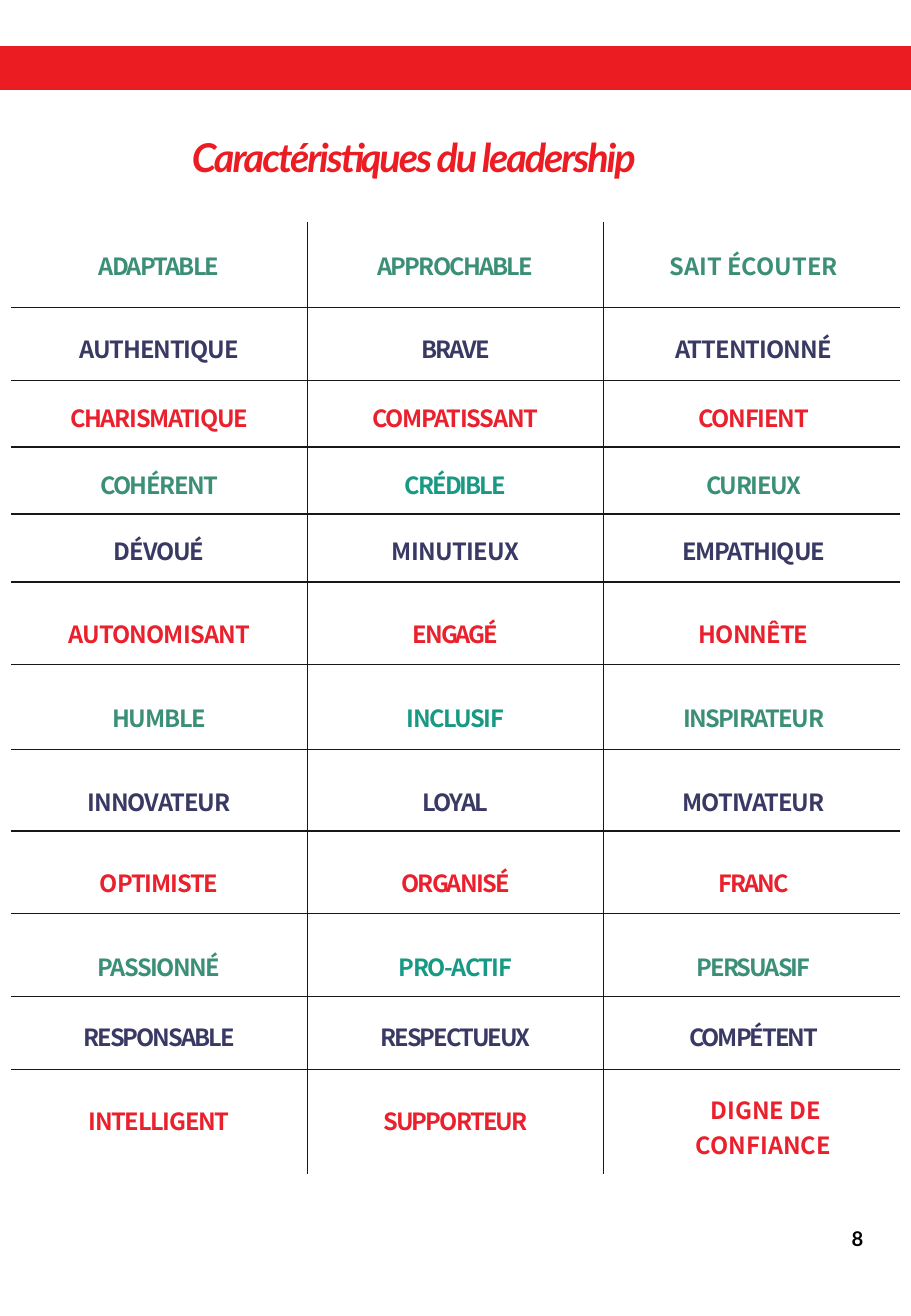
from dataclasses import dataclass

from lxml.etree import SubElement
from pptx import Presentation
from pptx.dml.color import RGBColor
from pptx.enum.shapes import MSO_SHAPE
from pptx.enum.text import MSO_ANCHOR, MSO_AUTO_SIZE, PP_ALIGN
from pptx.oxml.ns import qn
from pptx.util import Inches, Pt

BAR_RED = RGBColor(0xEC, 0x1C, 0x23)
RED = RGBColor(0xEA, 0x20, 0x2C)
GREEN = RGBColor(0x3C, 0x8F, 0x77)
TEAL = RGBColor(0x17, 0x99, 0x84)
NAVY = RGBColor(0x39, 0x39, 0x64)
BLACK = RGBColor(0, 0, 0)
RULE = RGBColor(0x17, 0x17, 0x17)

TITLE_FONT = "Lato"
TABLE_FONT = "Noto Sans CJK JP"
NO_GRID_STYLE = "{2D5ABB26-0587-4C30-8999-92F81FD0307C}"
COLUMN_WIDTH = 2.44
ROW_COLORS = (GREEN, NAVY, RED)


@dataclass
class Trait:
    text: str
    spacing: float  # letter spacing in points


@dataclass
class Row:
    height: float
    top: float  # top margin of the cells, in inches
    traits: tuple[Trait, Trait, Trait]


ROWS = [
    Row(0.7, 0, (Trait("ADAPTABLE", -1.1), Trait("APPROCHABLE", -1.1), Trait("SAIT ÉCOUTER", 0))),
    Row(0.6, 0.19, (Trait("AUTHENTIQUE", -0.7), Trait("BRAVE", -1.1), Trait("ATTENTIONNÉ", -0.6))),
    Row(0.55, 0.16, (Trait("CHARISMATIQUE", -0.8), Trait("COMPATISSANT", -0.8), Trait("CONFIENT", -0.7))),
    Row(0.55, 0.16, (Trait("COHÉRENT", -0.9), Trait("CRÉDIBLE", -1.2), Trait("CURIEUX", -0.9))),
    Row(0.56, 0.16, (Trait("DÉVOUÉ", -0.7), Trait("MINUTIEUX", -0.4), Trait("EMPATHIQUE", -0.7))),
    Row(0.68, 0.28, (Trait("AUTONOMISANT", -0.5), Trait("ENGAGÉ", -1.2), Trait("HONNÊTE", -0.6))),
    Row(0.7, 0.29, (Trait("HUMBLE", -0.8), Trait("INCLUSIF", -0.9), Trait("INSPIRATEUR", -0.9))),
    Row(0.67, 0.28, (Trait("INNOVATEUR", -0.6), Trait("LOYAL", -1.1), Trait("MOTIVATEUR", -0.6))),
    Row(0.68, 0.28, (Trait("OPTIMISTE", -0.7), Trait("ORGANISÉ", -1.1), Trait("FRANC", -1.1))),
    Row(0.68, 0.29, (Trait("PASSIONNÉ", -0.9), Trait("PRO-ACTIF", -0.9), Trait("PERSUASIF", -1.2))),
    Row(0.6, 0.19, (Trait("RESPONSABLE", -1.2), Trait("RESPECTUEUX", -1.2), Trait("COMPÉTENT", -1.2))),
    Row(0.86, 0.28, (Trait("INTELLIGENT", -0.8), Trait("SUPPORTEUR", -1.1), Trait("DIGNE DE CONFIANCE", 0))),
]


def clear_margins(frame) -> None:
    frame.margin_left = frame.margin_right = 0
    frame.margin_top = frame.margin_bottom = 0


def write(p, text: str, font: str, size: float, color: RGBColor, spacing: float = 0) -> None:
    r = p.add_run()
    r.text = text
    p.font.name = r.font.name = font
    p.font.size = r.font.size = Pt(size)
    p.font.bold = r.font.bold = True
    p.font.color.rgb = r.font.color.rgb = color
    r.font._element.set("spc", str(round(spacing * 100)))


def set_indent(p, left: float, first: float = 0) -> None:
    pPr = p._p.get_or_add_pPr()
    pPr.set("marL", str(Inches(left)))
    pPr.set("indent", str(Inches(first)))


def set_borders(cell, edges: list[str]) -> None:
    tcPr = cell._tc.get_or_add_tcPr()
    for edge in edges:
        ln = SubElement(tcPr, qn(f"a:{edge}"), w=str(Pt(1)))
        fill = SubElement(ln, qn("a:solidFill"))
        SubElement(fill, qn("a:srgbClr"), val=str(RULE))


def add_traits(s) -> None:
    height = sum(row.height for row in ROWS)
    frame = s.shapes.add_table(len(ROWS), 3, Inches(0.09), Inches(1.83),
                               Inches(3 * COLUMN_WIDTH), Inches(height))
    table = frame.table
    table.first_row = table.horz_banding = False
    table._tbl.tblPr.find(qn("a:tableStyleId")).text = NO_GRID_STYLE
    for column in table.columns:
        column.width = Inches(COLUMN_WIDTH)

    for i, row in enumerate(ROWS):
        table.rows[i].height = Inches(row.height)
        for j, trait in enumerate(row.traits):
            cell = table.cell(i, j)
            clear_margins(cell)
            cell.margin_top = Inches(row.top)
            cell.vertical_anchor = MSO_ANCHOR.TOP if i else MSO_ANCHOR.MIDDLE

            # Only the inner edges of the grid are ruled
            inner = {"lnL": j > 0, "lnR": j < 2, "lnT": i > 0, "lnB": i < len(ROWS) - 1}
            set_borders(cell, [edge for edge, shown in inner.items() if shown])
            cell.fill.background()

            color = ROW_COLORS[i % 3]
            if color == GREEN and j == 1 and i > 0:
                color = TEAL
            p = cell.text_frame.paragraphs[0]
            p.alignment = PP_ALIGN.CENTER
            if j == 2:
                set_indent(p, 0.03)
            write(p, trait.text, TABLE_FONT, 14, color, trait.spacing)

    # The last trait wraps onto two lines
    last = table.cell(len(ROWS) - 1, 2)
    last.margin_top = Inches(0.19)
    p = last.text_frame.paragraphs[0]
    p.alignment = PP_ALIGN.LEFT
    set_indent(p, 0.76, 0.12)


def main() -> None:
    prs = Presentation()
    prs.slide_width, prs.slide_height = Inches(7.5), Inches(10.83)
    s = prs.slides.add_slide(prs.slide_layouts[5])

    # Red bar
    bar = s.shapes.add_shape(MSO_SHAPE.RECTANGLE, 0, Inches(0.38), Inches(7.5), Inches(0.36))
    bar.shadow.inherit = False
    bar.fill.solid()
    bar.fill.fore_color.rgb = BAR_RED
    bar.line.fill.background()

    # Title
    title = s.shapes.title
    title.left, title.top = Inches(1.57), Inches(1.08)
    title.width, title.height = Inches(4.35), Inches(0.41)
    tf = title.text_frame
    clear_margins(tf)
    tf.margin_top = Inches(0.01)
    tf.auto_size = MSO_AUTO_SIZE.NONE
    tf.vertical_anchor = MSO_ANCHOR.TOP
    p = tf.paragraphs[0]
    p.alignment = PP_ALIGN.LEFT
    set_indent(p, 0.01)
    write(p, "Caractéristiques du leadership", TITLE_FONT, 23.5, BAR_RED, -1.25)
    p.runs[0].font.italic = True

    # Table of traits
    add_traits(s)

    # Page number
    number = s.shapes.add_textbox(Inches(6.97), Inches(10.09), Inches(0.19), Inches(0.2))
    tf = number.text_frame
    tf.word_wrap = True
    clear_margins(tf)
    set_indent(tf.paragraphs[0], 0.04)
    write(tf.paragraphs[0], "8", TITLE_FONT, 12, BLACK)

    prs.save("out.pptx")


if __name__ == "__main__":
    main()
